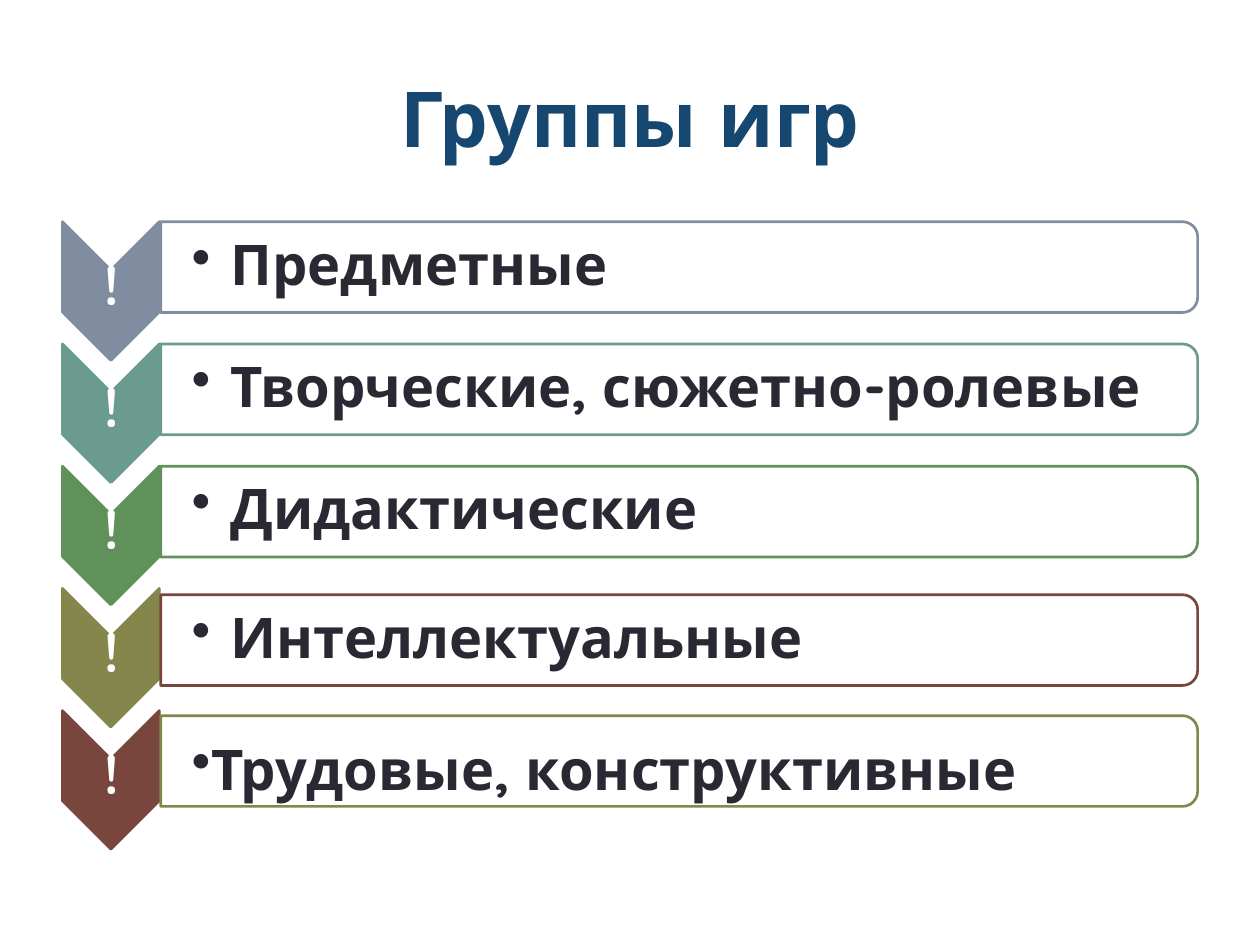
import pptx
import pptx.util
import pptx.dml.color
import pptx.enum.shapes
import pptx.enum.text
import pptx.oxml.ns
import lxml.etree

Inches = pptx.util.Inches
Shapes = pptx.enum.shapes.MSO_SHAPE
Align = pptx.enum.text.PP_ALIGN

COLORS = {
    "title": "164770", "text": "292934", "white": "FFFFFF",
    "slate": "808DA0", "teal": "6B9A8E", "green": "61915A",
    "olive": "85864B", "brown": "79463D",
}
FONT = "Quicksand"
PITCH = 0.97
FIRST_CHEVRON = 2.31
FIRST_BAR = 2.12
GROUPS = [
    ("Предметные", "slate", "slate", FIRST_BAR, {}),
    ("Творческие, сюжетно-ролевые", "teal", "teal", FIRST_BAR + PITCH, {}),
    ("Дидактические", "green", "green", FIRST_BAR + 2 * PITCH, {}),
    ("Интеллектуальные", "olive", "brown", 5.08, {}),
    ("Трудовые, конструктивные", "brown", "olive", 6.04,
     {"indent": 0, "line_spacing": 1.0, "shift": 0.06}),
]


def color(name):
    return pptx.dml.color.RGBColor.from_string(COLORS[name])


def write_text(frame, text, size=32, tint="text", align=Align.LEFT, line_spacing=0.9, indent=None):
    frame.word_wrap = True
    frame.vertical_anchor = pptx.enum.text.MSO_ANCHOR.MIDDLE
    paragraph = frame.paragraphs[0]
    paragraph.text = text
    paragraph.alignment = align
    paragraph.line_spacing = line_spacing
    if indent is not None:
        properties = paragraph._p.get_or_add_pPr()
        properties.set("marL", str(Inches(indent)))
        properties.set("indent", str(-Inches(indent)))
        bullet = lxml.etree.SubElement(properties, pptx.oxml.ns.qn("a:buChar"))
        bullet.set("char", "•")
    font = paragraph.runs[0].font
    font.name = FONT
    font.size = pptx.util.Pt(size)
    font.bold = True
    font.color.rgb = color(tint)


class SlideBuilder:
    """Draws the styled elements of one slide."""

    def __init__(self, slide):
        self.slide = slide

    def title(self, text):
        shape = self.slide.shapes.title
        shape.left, shape.top = Inches(0.5), Inches(0.3)
        shape.width, shape.height = Inches(9), Inches(1.25)
        write_text(shape.text_frame, text, size=44, tint="title", align=Align.CENTER, line_spacing=1.0)

    def turned_shape(self, kind, center_x, center_y, width, height, fill, line):
        shape = self.slide.shapes.add_shape(
            kind, Inches(center_x - width / 2), Inches(center_y - height / 2),
            Inches(width), Inches(height))
        shape.rotation = 90
        shape.shadow.inherit = False
        shape.fill.solid()
        shape.fill.fore_color.rgb = color(fill)
        shape.line.color.rgb = color(line)
        shape.line.width = pptx.util.Pt(1.54)
        return shape

    def label(self, text, left, center_y, width, height, inset=0.02, **style):
        box = self.slide.shapes.add_textbox(
            Inches(left), Inches(center_y - height / 2), Inches(width), Inches(height))
        frame = box.text_frame
        frame.margin_left = Inches(inset)
        frame.margin_right = frame.margin_top = frame.margin_bottom = Inches(0.02)
        write_text(frame, text, **style)

    def chevron(self, center_y, tint):
        self.turned_shape(Shapes.CHEVRON, 0.88, center_y, 1.1, 0.77, tint, tint)
        self.label("!", 0.5, center_y - 0.03, 0.77, 0.33, tint="white", align=Align.CENTER)

    def bar(self, text, center_y, tint, indent=0.31, line_spacing=0.9, shift=0):
        shape = self.turned_shape(
            Shapes.ROUND_2_SAME_RECTANGLE, 5.39, center_y, 0.72, 8.23, "white", tint)
        fill_color = shape.fill._xPr.find(".//" + pptx.oxml.ns.qn("a:srgbClr"))
        alpha = lxml.etree.SubElement(fill_color, pptx.oxml.ns.qn("a:alpha"))
        alpha.set("val", "90000")
        self.label(text, 1.27, center_y + shift, 8.19, 0.65, inset=0.25,
                   indent=indent, line_spacing=line_spacing)


def main():
    presentation = pptx.Presentation()
    presentation.slide_width = Inches(10)
    presentation.slide_height = Inches(7.5)
    builder = SlideBuilder(presentation.slides.add_slide(presentation.slide_layouts[5]))
    builder.title("Группы игр")
    for index, (text, chevron_tint, bar_tint, bar_center, style) in enumerate(GROUPS):
        builder.chevron(FIRST_CHEVRON + index * PITCH, chevron_tint)
        builder.bar(text, bar_center, bar_tint, **style)
    presentation.save("out.pptx")


if __name__ == "__main__":
    main()
